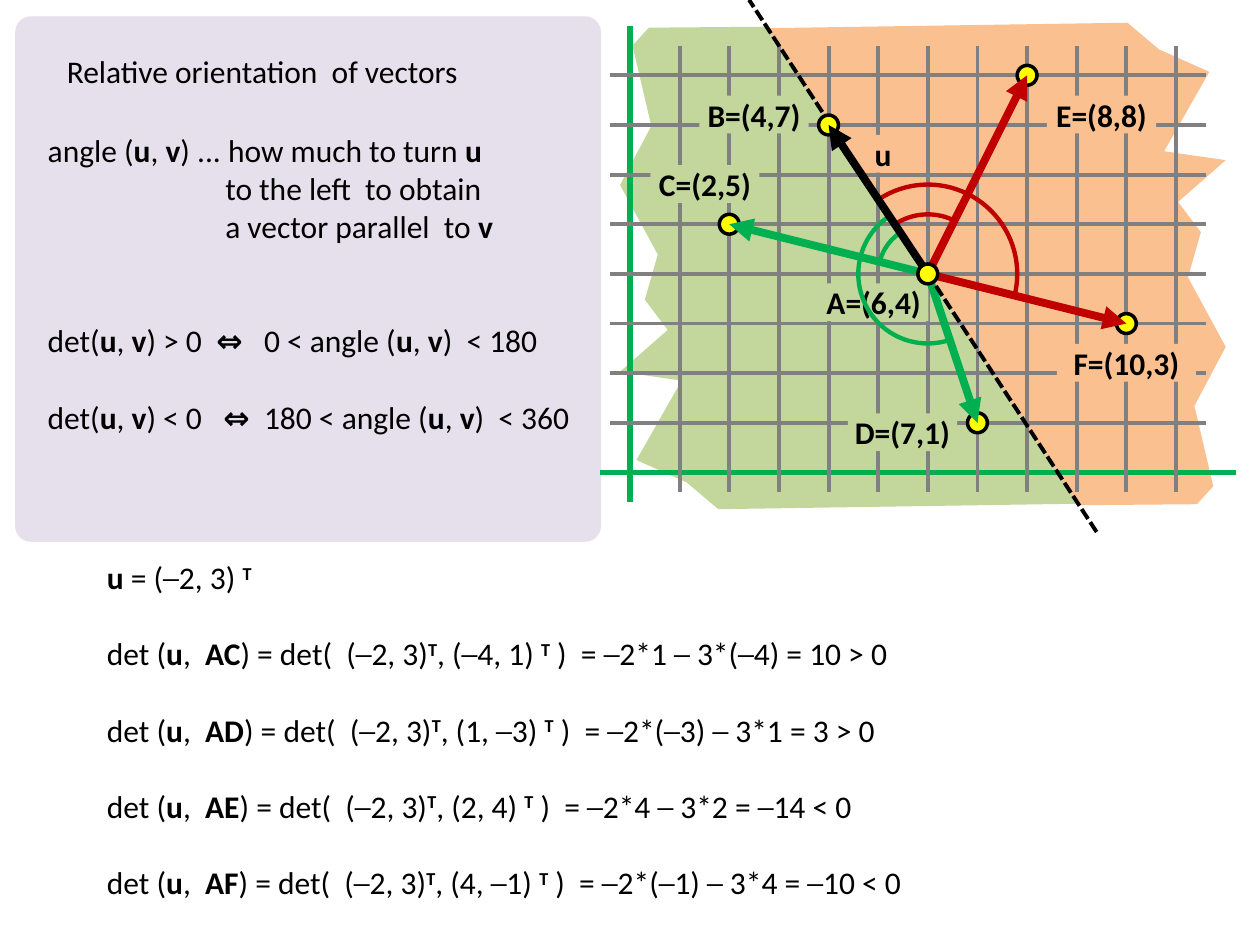
"""Build a slide on the relative orientation of plane vectors."""
from dataclasses import dataclass
from math import atan2, degrees

from lxml.etree import SubElement
from pptx import Presentation
from pptx.dml.color import RGBColor
from pptx.enum.dml import MSO_LINE
from pptx.enum.shapes import MSO_CONNECTOR, MSO_SHAPE
from pptx.enum.text import MSO_ANCHOR, PP_ALIGN
from pptx.oxml.ns import qn
from pptx.util import Inches, Pt


@dataclass(frozen=True)
class Theme:
    """Colours, font and sizes used on the slide."""
    panel: str = "E6E0EC"
    left: str = "C3D69B"
    right: str = "FAC090"
    grid: str = "808080"
    green: str = "00B050"
    red: str = "C00000"
    dot: str = "FFFF00"
    ink: str = "000000"
    font: str = "Calibri"
    size: int = 18
    line_gap: int = 22
    grid_width: float = 2.25
    axis_width: float = 3
    arc_width: float = 2.5
    dot_width: float = 2
    arrow_width: float = 4.5


T = Theme()
CELL = 0.1
UNIT = 0.394
ORIGIN = (5, 3.75)
POINTS = {"A": (6, 4), "B": (4, 7), "C": (2, 5), "D": (7, 1), "E": (8, 8), "F": (10, 3)}
LEFT_REGION = [
    (8.81, -0.3), (2.77, 8.98), (0.38, 8.96), (0.05, 8.6), (0.43, 6.98),
    (-0.2, 5.79), (0.56, 4.39), (0.3, 3.48), (0.76, 2.87), (-0.2, 2.03),
    (1.04, 1.85), (0.13, 0.25), (1.14, -0.2), (1.78, -0.74), (9.04, -0.63),
]
RIGHT_REGION = [(11.8 - x, 8.32 - y) for x, y in LEFT_REGION]
LABELS = [
    ("B=(4,7)", (1.4, 7.59), 2.2, T.left),
    ("C=(2,5)", (0.41, 6.19), 2.2, T.left),
    ("D=(7,1)", (4.39, 1.19), 2.2, T.left),
    ("F=(10,3)", (8.6, 2.59), 2.8, T.right),
    ("E=(8,8)", (8.4, 7.59), 2.2, T.right),
]
RULES = [
    ("angle (|u|, |v|) ... how much to turn |u|", 0, 0),
    ("to the left  to obtain", 0, 1.41),
    ("a vector parallel  to |v|", 0, 1.41),
    ("det(|u|, |v|) > 0  |⇔|   0 < angle (|u|, |v|)  < 180", 2, 0),
    ("det(|u|, |v|) < 0   |⇔|  180 < angle (|u|, |v|)  < 360", 1, 0),
]
RESULTS = [
    ("AC", "(─4, 1)", "─2*1 ─ 3*(─4) = 10 > 0"),
    ("AD", "(1, ─3)", "─2*(─3) ─ 3*1 = 3 > 0"),
    ("AE", "(2, 4)", "─2*4 ─ 3*2 = ─14 < 0"),
    ("AF", "(4, ─1)", "─2*(─1) ─ 3*4 = ─10 < 0"),
]


def cells(*lengths):
    """Convert slide grid cells to lengths."""
    return [Inches(n * CELL) for n in lengths]


def plot(x, y):
    """Convert plot coordinates to a slide position."""
    return Inches(ORIGIN[0] + x * UNIT), Inches(ORIGIN[1] - y * UNIT)


def square(center, half):
    """Return the box around a plot point."""
    x, y = center
    side = Inches(2 * half * UNIT)
    return *plot(x - half, y + half), side, side


def paint(sp, fill=None, line=None, width=0):
    """Set fill and outline and drop the shadow."""
    sp.shadow.inherit = False
    if fill:
        sp.fill.solid()
        sp.fill.fore_color.rgb = RGBColor.from_string(fill)
    else:
        sp.fill.background()
    if line:
        sp.line.color.rgb = RGBColor.from_string(line)
        sp.line.width = Pt(width)
    else:
        sp.line.fill.background()


def style(r, bold=False):
    """Apply the text style to a run."""
    r.font.name, r.font.size, r.font.bold = T.font, Pt(T.size), bold
    r.font.color.rgb = RGBColor.from_string(T.ink)


def add_title(s, text, box):
    """Place the title above the shapes drawn so far."""
    sp = s.shapes.title
    sp.left, sp.top, sp.width, sp.height = box
    sp.text_frame.text = text
    sp.text_frame.vertical_anchor = MSO_ANCHOR.TOP
    p = sp.text_frame.paragraphs[0]
    p.alignment = PP_ALIGN.LEFT
    style(p.runs[0])
    sp.element.getparent().append(sp.element)


def add_text(s, box, items):
    """Write paragraphs whose |parts| are bold and whose T is raised."""
    tf = s.shapes.add_textbox(*box).text_frame
    tf.word_wrap = True
    for i, (text, gap, indent) in enumerate(items):
        p = tf.add_paragraph() if i else tf.paragraphs[0]
        p.space_before = Pt(gap * T.line_gap)
        p._p.get_or_add_pPr().set("marL", str(Inches(indent)))
        for j, part in enumerate(text.split("|")):
            if part:
                r = p.add_run()
                r.text = part
                style(r, j % 2 == 1)
                if part == "T":
                    r.font._element.set("baseline", "30000")


def add_line(shapes, start, end, color, width, arrow=False, dash=None):
    """Draw a line between two plot points."""
    c = shapes.add_connector(MSO_CONNECTOR.STRAIGHT, *plot(*start), *plot(*end))
    c.line.color.rgb = RGBColor.from_string(color)
    c.line.width = Pt(width)
    if dash:
        c.line.dash_style = dash
    if arrow:
        SubElement(c.line._get_or_add_ln(), qn("a:tailEnd"), type="triangle")
    SubElement(c._element.spPr, qn("a:effectLst"))


def add_grid(s):
    """Draw the axes and the unit grid as one group."""
    shapes = s.shapes.add_group_shape().shapes
    add_line(shapes, (-0.6, 0), (12.2, 0), T.green, T.axis_width)
    add_line(shapes, (0, 9), (0, -0.6), T.green, T.axis_width)
    for x in range(1, 12):
        add_line(shapes, (x, 8.6), (x, -0.4), T.grid, T.grid_width)
    for y in range(1, 9):
        add_line(shapes, (-0.4, y), (11.6, y), T.grid, T.grid_width)


def add_region(s, points, fill):
    """Fill a half-plane with a ragged border."""
    start, *rest = [plot(*pt) for pt in points]
    fb = s.shapes.build_freeform(*start, scale=1.0)
    fb.add_line_segments(rest, close=True)
    paint(fb.convert_to_shape(), fill)


def add_dot(s, name):
    """Mark a named point."""
    sp = s.shapes.add_shape(MSO_SHAPE.OVAL, *square(POINTS[name], 0.2))
    paint(sp, T.dot, T.ink, T.dot_width)


def add_arrow(s, name, color):
    """Draw the vector from A to a named point."""
    add_line(s.shapes, POINTS["A"], POINTS[name], color, T.arrow_width, arrow=True)


def add_arc(s, start, end, radius, color):
    """Draw a clockwise arc around A between two named points."""
    sp = s.shapes.add_shape(MSO_SHAPE.ARC, *square(POINTS["A"], radius))
    sp.rotation = 270
    ax, ay = POINTS["A"]
    for i, name in enumerate((start, end)):
        x, y = POINTS[name]
        sp.adjustments[i] = (degrees(atan2(ay - y, x - ax)) + 90) % 360 * 0.6
    paint(sp, None, color, T.arc_width)


def add_label(s, text, corner, width, fill):
    """Write a bold label on a patch of region colour."""
    size = Inches(width * UNIT), Inches(0.76 * UNIT)
    sp = s.shapes.add_shape(MSO_SHAPE.RECTANGLE, *plot(*corner), *size)
    paint(sp, fill)
    tf = sp.text_frame
    tf.margin_left = tf.margin_right = tf.margin_top = tf.margin_bottom = 0
    tf.word_wrap = False
    tf.vertical_anchor = MSO_ANCHOR.MIDDLE
    tf.text = text
    tf.paragraphs[0].alignment = PP_ALIGN.CENTER
    style(tf.paragraphs[0].runs[0], True)


def main():
    """Assemble and save the slide."""
    prs = Presentation()
    prs.slide_width, prs.slide_height = Inches(10), Inches(7.5)
    s = prs.slides.add_slide(prs.slide_layouts[5])
    panel = s.shapes.add_shape(MSO_SHAPE.ROUNDED_RECTANGLE, *cells(1.2, 1.3, 46.5, 41.7))
    panel.adjustments[0] = 0.03
    paint(panel, T.panel)
    add_region(s, LEFT_REGION, T.left)
    add_region(s, RIGHT_REGION, T.right)
    add_grid(s)
    add_label(s, "A=(6,4)", (3.81, 3.81), 2.2, T.left)
    add_title(s, "Relative orientation  of vectors", cells(4.3, 3.6, 39.4, 4))
    add_text(s, cells(2.8, 9.9, 46.5, 25.2), RULES)
    for start, end, radius, color in (("C", "B", 1, T.green), ("D", "B", 1.4, T.green),
                                      ("B", "E", 1.2, T.red), ("B", "F", 1.8, T.red)):
        add_arc(s, start, end, radius, color)
    for name in "EFDC":
        add_dot(s, name)
    for name, color in zip("EFCD", (T.red, T.red, T.green, T.green)):
        add_arrow(s, name, color)
    for label in LABELS:
        add_label(s, *label)
    add_line(s.shapes, (9.4, -1.2), (2.4, 9.52), T.ink, T.grid_width, dash=MSO_LINE.SQUARE_DOT)
    add_dot(s, "B")
    add_arrow(s, "B", T.ink)
    add_dot(s, "A")
    add_label(s, "u", (4.8, 6.8), 0.6, T.right)
    results = [(f"det (|u|,  |{v}|) = det(  (─2, 3)|T|, {xy} |T| )  = {value}", 1, 0)
               for v, xy, value in RESULTS]
    add_text(s, cells(7.5, 43.8, 84.3, 28.3), [("|u| = (─2, 3) |T|", 0, 0), *results])
    prs.save("out.pptx")


if __name__ == "__main__":
    main()
